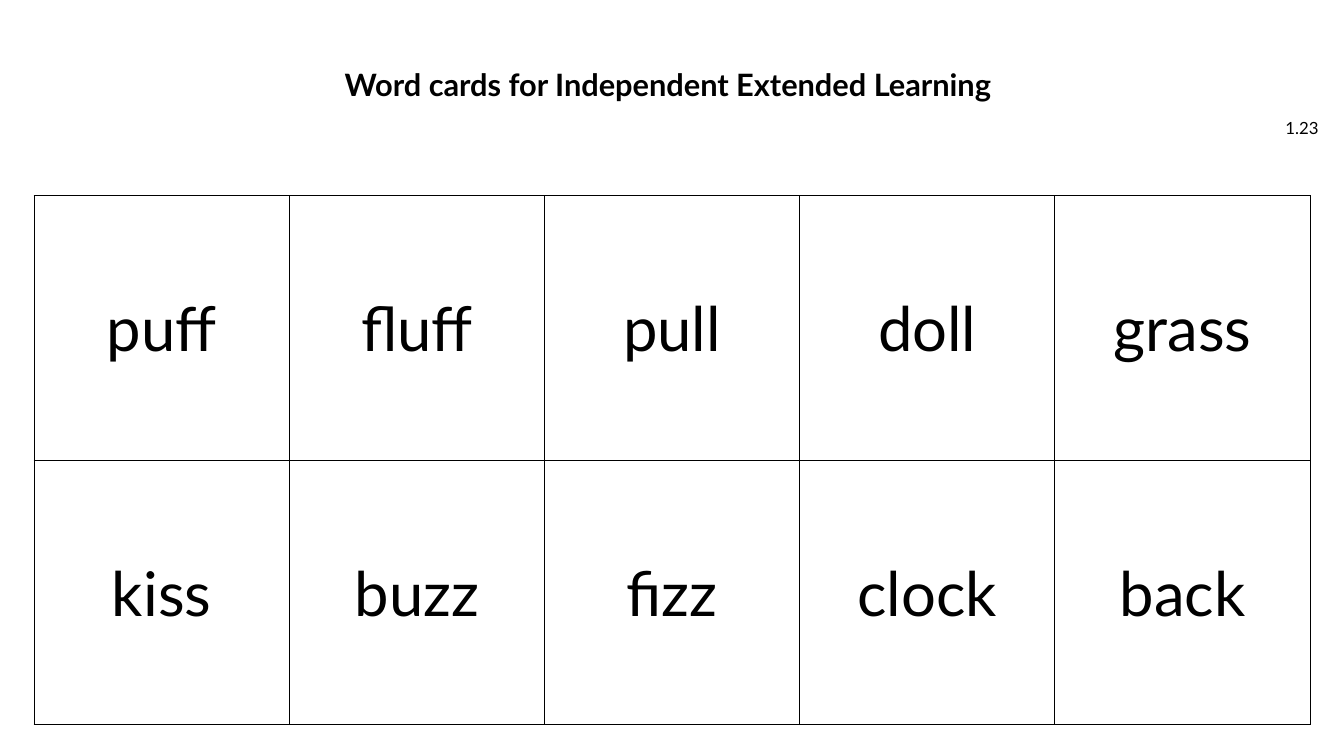
from dataclasses import dataclass

from lxml.etree import SubElement as Sub
from pptx import Presentation as Deck
from pptx.dml.color import RGBColor as Color
from pptx.enum.text import MSO_ANCHOR as Anchor, MSO_AUTO_SIZE as Fit, PP_ALIGN as Align
from pptx.oxml.ns import qn
from pptx.util import Cm, Pt


@dataclass(frozen=True)
class Theme:
    face: str = "Lato"
    ink: str = "000000"
    paper: str = "FFFFFF"
    title: int = 22
    label: int = 12
    word: int = 44
    rule: int = 1


THEME = Theme()
WORDS = [
    ["puff", "fluff", "pull", "doll", "grass"],
    ["kiss", "buzz", "fizz", "clock", "back"],
]


def write(frame, text, size, align, bold=False):
    frame.text = text
    para = frame.paragraphs[0]
    para.alignment = align
    font = para.font
    font.name, font.size, font.bold = THEME.face, Pt(size), bold
    font.color.rgb = Color.from_string(THEME.ink)
    return para


def add_title(slide, text):
    title = slide.shapes.title
    title.left, title.top = Cm(5.87), Cm(1.63)
    title.width, title.height = Cm(22.12), Cm(0.89)
    frame = title.text_frame
    frame.auto_size = Fit.NONE
    frame.vertical_anchor = Anchor.TOP
    para = write(frame, text, THEME.title, Align.CENTER, True)
    para.line_spacing = 0.9


def add_label(slide, text):
    box = slide.shapes.add_textbox(Cm(31.88), Cm(2.72), Cm(1.6), Cm(1.02))
    frame = box.text_frame
    frame.word_wrap = True
    frame.vertical_anchor = Anchor.MIDDLE
    write(frame, text, THEME.label, Align.RIGHT)


def add_edges(cell):
    props = cell._tc.get_or_add_tcPr()
    for side in ("a:lnL", "a:lnR", "a:lnT", "a:lnB"):
        line = Sub(props, qn(side), w=str(Pt(THEME.rule)))
        fill = Sub(line, qn("a:solidFill"))
        Sub(fill, qn("a:srgbClr"), val=THEME.ink)


def add_cards(slide, words):
    rows, cols = len(words), len(words[0])
    frame = slide.shapes.add_table(rows, cols, Cm(0.86), Cm(4.93), Cm(32.16), Cm(13.33))
    table = frame.table
    table.first_row = table.horz_banding = False
    for row, line in enumerate(words):
        for col, word in enumerate(line):
            cell = table.cell(row, col)
            add_edges(cell)
            cell.fill.solid()
            cell.fill.fore_color.rgb = Color.from_string(THEME.paper)
            cell.vertical_anchor = Anchor.MIDDLE
            write(cell.text_frame, word, THEME.word, Align.CENTER)


def main():
    deck = Deck()
    deck.slide_width, deck.slide_height = Cm(33.87), Cm(19.05)
    slide = deck.slides.add_slide(deck.slide_layouts[5])
    add_label(slide, "1.23")
    add_title(slide, "Word cards for Independent Extended Learning ")
    add_cards(slide, WORDS)
    deck.save("out.pptx")


if __name__ == "__main__":
    main()
